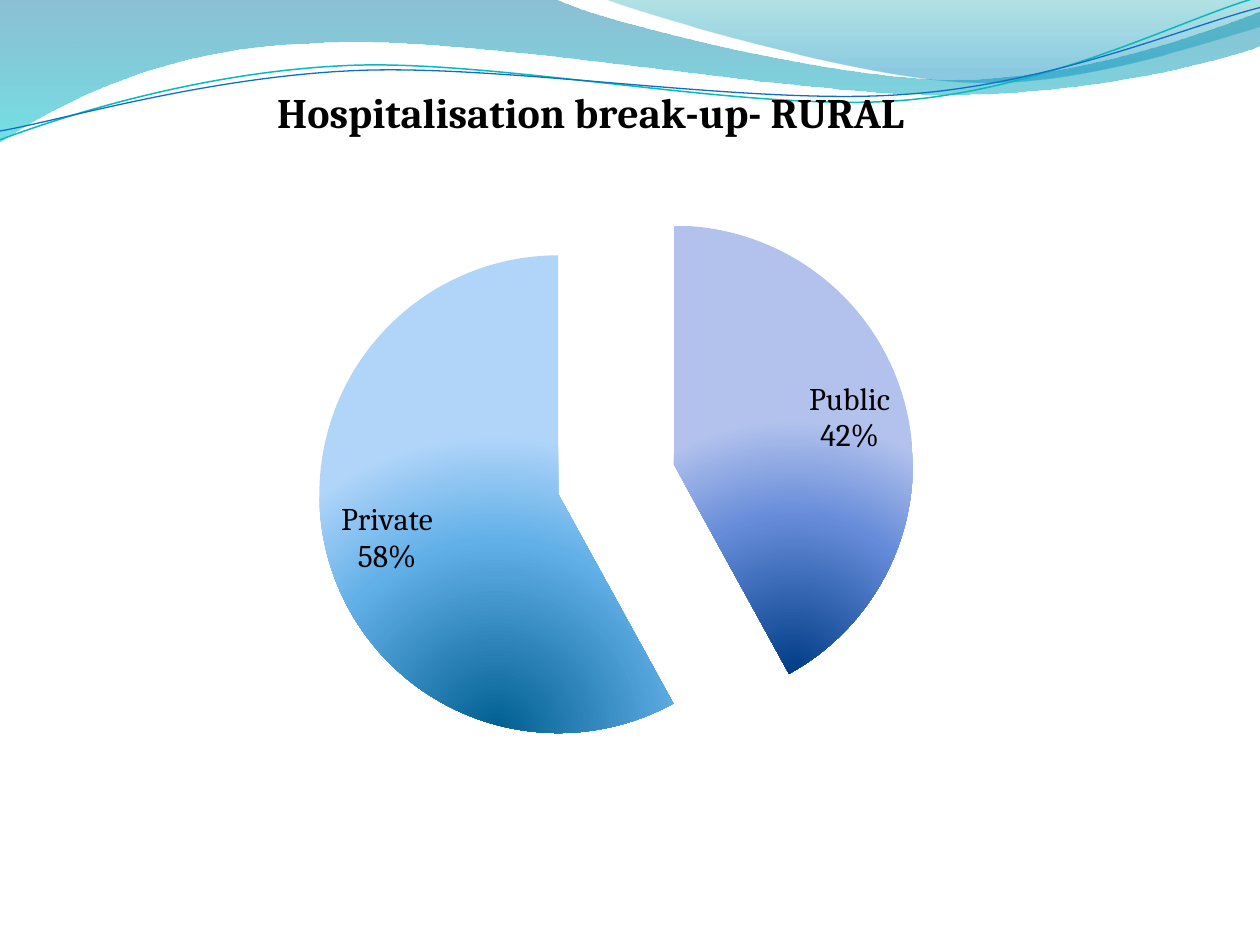
from dataclasses import dataclass
from typing import Optional

from lxml.etree import SubElement
from pptx import Presentation
from pptx.chart.data import CategoryChartData
from pptx.dml.color import RGBColor
from pptx.enum.chart import XL_CHART_TYPE as ChartType, XL_LABEL_POSITION as LabelPosition
from pptx.oxml.ns import qn
from pptx.util import Inches, Pt

PAGE_WIDTH, PAGE_HEIGHT = Inches(10), Inches(7.5)
CELL = PAGE_WIDTH // 10  # the page is a grid of 10 columns by 7.5 rows
CHART_COLUMNS, CHART_ROWS = 9, 6.12
FONT = "Cambria"

BLACK = RGBColor(0x00, 0x00, 0x00)
BLUE = RGBColor(0x0F, 0x6F, 0xC6)
TEAL = RGBColor(0x0A, 0xB8, 0xBF)
WAVE_TOP = RGBColor(0x00, 0x74, 0xA1)
WAVE_BOTTOM = RGBColor(0x00, 0xC6, 0xCF)
CREST_TOP = RGBColor(0x00, 0xA1, 0xA9)
CREST_BOTTOM = RGBColor(0x00, 0x8B, 0xBF)
PUBLIC_DARK = RGBColor(0x00, 0x3C, 0x86)
PUBLIC_MID = RGBColor(0x66, 0x8C, 0xD9)
PUBLIC_LIGHT = RGBColor(0xB2, 0xC2, 0xED)
PRIVATE_DARK = RGBColor(0x00, 0x5E, 0x90)
PRIVATE_MID = RGBColor(0x62, 0xB0, 0xE8)
PRIVATE_LIGHT = RGBColor(0xB0, 0xD5, 0xF9)


@dataclass(frozen=True)
class Stop:
    percent: int
    color: RGBColor
    opacity: int = 100


@dataclass(frozen=True)
class Wave:
    """A path in grid cells: two numbers make a line, six a cubic curve."""
    start: tuple
    segments: list
    stops: Optional[list] = None
    line_color: Optional[RGBColor] = None
    line_width: float = 0


@dataclass(frozen=True)
class Slice:
    name: str
    share: int
    stops: list


WAVES = [
    Wave((0, 0), [
        (4.4, -0.01), (4.76, 0.17, 6.64, 0.63, 7.58, 0.63),
        (8.53, 0.63, 9.58, 0.26, 10, 0.09), (10.01, 0.36),
        (9.83, 0.44, 8.7, 0.76, 7.46, 0.75), (6.22, 0.75, 3.82, 0.28, 2.57, 0.34),
        (1.29, 0.36, 0.46, 0.83, -0.01, 1.13), (0, 0)],
        stops=[Stop(0, WAVE_TOP, 45), Stop(100, WAVE_BOTTOM, 55)]),
    Wave((4.79, -0.01), [
        (5.09, 0.11, 6.82, 0.62, 7.69, 0.65), (8.56, 0.69, 9.61, 0.32, 10, 0.21),
        (10, 0), (4.79, -0.01)],
        stops=[Stop(0, CREST_TOP, 30), Stop(80, CREST_BOTTOM, 45)]),
    Wave((0, 1.11), [
        (0.48, 0.93, 1.58, 0.57, 2.77, 0.52), (3.95, 0.47, 5.93, 0.89, 7.13, 0.8),
        (8.33, 0.71, 9.38, 0.15, 9.98, -0.02)],
        line_color=TEAL, line_width=0.85),
    Wave((0, 1.04), [
        (0.47, 0.96, 1.64, 0.61, 2.83, 0.56), (4.03, 0.51, 5.97, 0.84, 7.17, 0.75),
        (8.36, 0.67, 9.41, 0.21, 10, 0.06)],
        line_color=BLUE, line_width=0.75),
]

SLICES = [
    Slice("Public", 42,
          [Stop(0, PUBLIC_DARK), Stop(62, PUBLIC_MID), Stop(100, PUBLIC_LIGHT)]),
    Slice("Private", 58,
          [Stop(0, PRIVATE_DARK), Stop(65, PRIVATE_MID), Stop(100, PRIVATE_LIGHT)]),
]


def bend_curves(shape, segments: list) -> None:
    """Join the three lines drawn for each six-number segment into one curve."""
    lines = iter(shape._element.xpath(".//a:lnTo"))
    for segment in segments:
        first = next(lines)
        if len(segment) == 2:
            continue
        curve = SubElement(first.getparent(), qn("a:cubicBezTo"))
        first.addprevious(curve)
        for line in (first, next(lines), next(lines)):
            curve.append(line[0])
            line.getparent().remove(line)


def paint_gradient(fill, properties, stops: list, radial: bool = False) -> None:
    """Fill downwards, or outwards from the middle of the lower edge."""
    fill.gradient()
    gradient = properties.find(qn("a:gradFill"))
    for child in list(gradient):
        gradient.remove(child)
    stop_list = SubElement(gradient, qn("a:gsLst"))
    for stop in stops:
        mark = SubElement(stop_list, qn("a:gs"), pos=str(stop.percent * 1000))
        color = SubElement(mark, qn("a:srgbClr"), val=str(stop.color))
        if stop.opacity < 100:
            SubElement(color, qn("a:alpha"), val=str(stop.opacity * 1000))
    if radial:
        circle = SubElement(gradient, qn("a:path"), path="circle")
        SubElement(circle, qn("a:fillToRect"), l="50000", t="100000", r="50000", b="0")
    else:
        SubElement(gradient, qn("a:lin"), ang="5400000", scaled="0")


def draw_wave(page, wave: Wave) -> None:
    points = [(round(x * CELL), round(y * CELL))
              for segment in [wave.start, *wave.segments]
              for x, y in zip(segment[::2], segment[1::2])]
    builder = page.shapes.build_freeform(*points[0], scale=1.0)
    builder.add_line_segments(points[1:], close=wave.stops is not None)
    shape = builder.convert_to_shape()
    bend_curves(shape, wave.segments)
    shape.shadow.inherit = False
    if wave.stops:
        paint_gradient(shape.fill, shape._element.spPr, wave.stops)
        shape.line.fill.background()
    else:
        shape.fill.background()
        shape.line.color.rgb = wave.line_color
        shape.line.width = Pt(wave.line_width)


def set_layout(layout, **cells: float) -> None:
    """Place a chart part, in grid cells from the chart's corner."""
    manual = SubElement(layout, qn("c:manualLayout"))
    if "w" in cells:
        SubElement(manual, qn("c:layoutTarget"), val="inner")
    for axis in ("x", "y"):
        SubElement(manual, qn(f"c:{axis}Mode"), val="edge")
    for name, length in cells.items():
        whole = CHART_COLUMNS if name in "xw" else CHART_ROWS
        SubElement(manual, qn(f"c:{name}"), val=str(length / whole))


def format_font(font, size: float, bold: bool = False) -> None:
    font.name = FONT
    font.size = Pt(size)
    font.bold = bold
    font.color.rgb = BLACK


def draw_pie(page, title: str, slices: list) -> None:
    data = CategoryChartData()
    data.categories = [part.name for part in slices]
    data.add_series("Series 1", [part.share for part in slices])
    chart = page.shapes.add_chart(
        ChartType.PIE_EXPLODED, round(0.5 * CELL), round(0.58 * CELL),
        CHART_COLUMNS * CELL, round(CHART_ROWS * CELL), data).chart
    chart.has_legend = False
    format_font(chart.font, 10)

    chart.has_title = True
    para = chart.chart_title.text_frame.paragraphs[0]
    para.text = title
    format_font(para.runs[0].font, 24, bold=True)
    chart.chart_title.include_in_layout = False
    space = chart._chartSpace
    for old in space.xpath(".//c:title/c:layout | .//c:plotArea/c:layout"):
        old.getparent().remove(old)
    title_text = space.xpath(".//c:title/c:tx")[0]
    title_layout = SubElement(title_text.getparent(), qn("c:layout"))
    title_text.addnext(title_layout)
    set_layout(title_layout, x=1.64, y=0.04)
    plot_area = space.xpath(".//c:plotArea")[0]
    plot_layout = SubElement(plot_area, qn("c:layout"))
    plot_area.insert(0, plot_layout)
    set_layout(plot_layout, x=2.02, y=0.54, w=4.74, h=5.37)

    plot = chart.plots[0]
    plot.vary_by_categories = True
    series = plot.series[0]
    for index, part in enumerate(slices):
        style = series.points[index].format
        style.line.fill.background()
        properties = space.xpath(".//c:dPt/c:spPr")[index]
        paint_gradient(style.fill, properties, part.stops, radial=True)

    labels = series.data_labels
    labels.show_category_name = True
    labels.show_percentage = True
    labels.show_value = False
    labels.position = LabelPosition.BEST_FIT
    format_font(labels.font, 18)
    separator = SubElement(labels._element, qn("c:separator"))
    separator.text = "\n"
    labels._element.find(qn("c:showBubbleSize")).addnext(separator)


def main() -> None:
    deck = Presentation()
    deck.slide_width, deck.slide_height = PAGE_WIDTH, PAGE_HEIGHT
    page = deck.slides.add_slide(deck.slide_layouts[6])
    for wave in WAVES:
        draw_wave(page, wave)
    draw_pie(page, "Hospitalisation break-up- RURAL", SLICES)
    deck.save("out.pptx")


if __name__ == "__main__":
    main()
